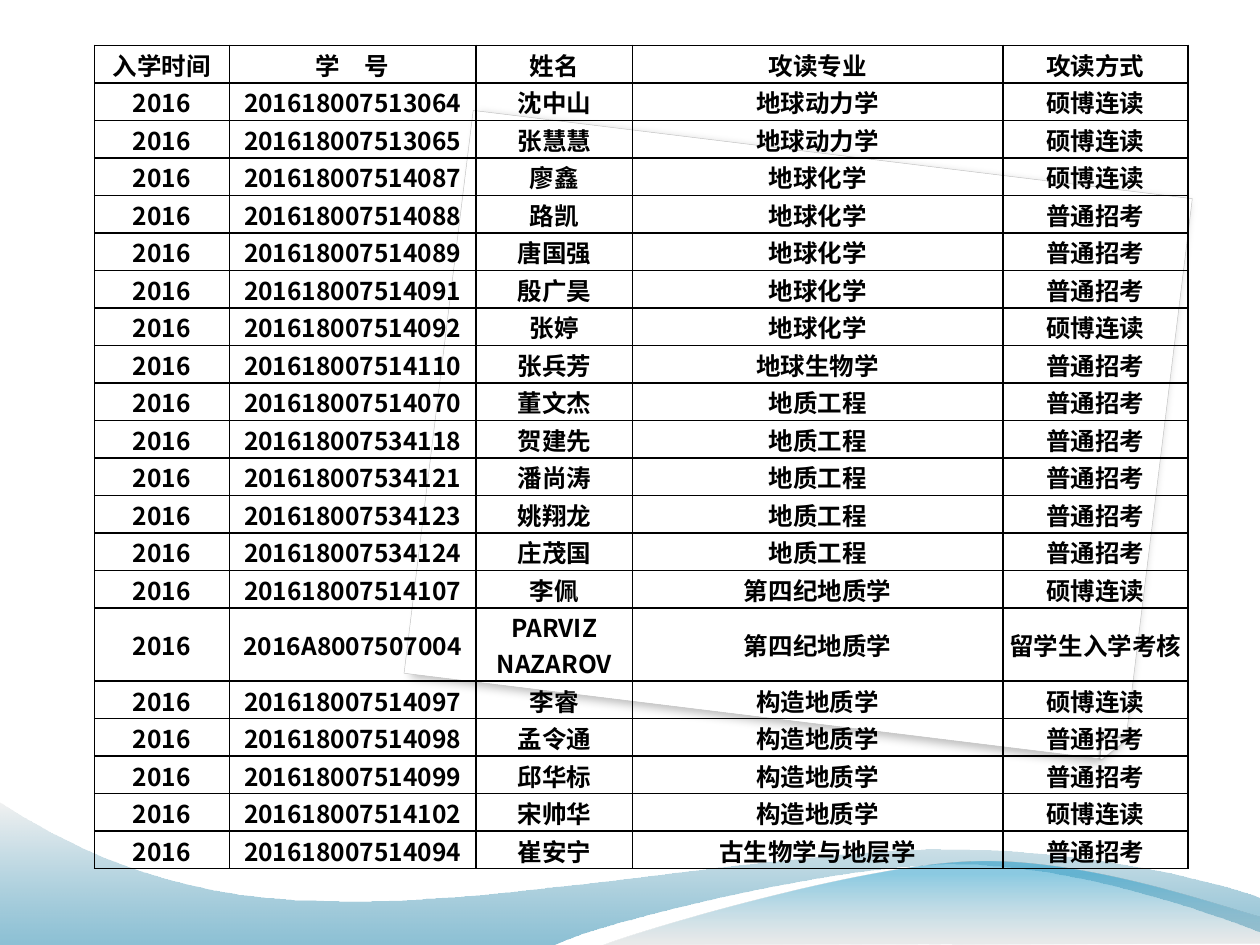
from lxml import etree
from pptx import Presentation
from pptx.dml.color import RGBColor
from pptx.enum.shapes import MSO_SHAPE
from pptx.enum.text import MSO_ANCHOR, PP_ALIGN
from pptx.oxml.ns import qn
from pptx.util import Emu, Inches, Pt

CENTER = PP_ALIGN.CENTER
MIDDLE = MSO_ANCHOR.MIDDLE
SNIPPED_CARD = MSO_SHAPE.SNIP_ROUND_RECTANGLE
FOLDED_CORNER = MSO_SHAPE.RIGHT_TRIANGLE

THEME = {
    "font": "Noto Sans CJK SC",
    "size": Pt(14),
    "text": "000000",
    "border": "000000",
    "border_width": Pt(1),
    "card": "FFFFFF",
    "card_line": "C0C0C0",
    "shadow": "000000",
}

HEADER = ("入学时间", "学　号", "姓名", "攻读专业", "攻读方式")
YEAR = "2016"
DIRECT, EXAM, FOREIGN = "硕博连读", "普通招考", "留学生入学考核"
STUDENTS = [
    ("201618007513064", "沈中山", "地球动力学", DIRECT),
    ("201618007513065", "张慧慧", "地球动力学", DIRECT),
    ("201618007514087", "廖鑫", "地球化学", DIRECT),
    ("201618007514088", "路凯", "地球化学", EXAM),
    ("201618007514089", "唐国强", "地球化学", EXAM),
    ("201618007514091", "殷广昊", "地球化学", EXAM),
    ("201618007514092", "张婷", "地球化学", DIRECT),
    ("201618007514110", "张兵芳", "地球生物学", EXAM),
    ("201618007514070", "董文杰", "地质工程", EXAM),
    ("201618007534118", "贺建先", "地质工程", EXAM),
    ("201618007534121", "潘尚涛", "地质工程", EXAM),
    ("201618007534123", "姚翔龙", "地质工程", EXAM),
    ("201618007534124", "庄茂国", "地质工程", EXAM),
    ("201618007514107", "李佩", "第四纪地质学", DIRECT),
    ("2016A8007507004", "PARVIZ NAZAROV", "第四纪地质学", FOREIGN),
    ("201618007514097", "李睿", "构造地质学", DIRECT),
    ("201618007514098", "孟令通", "构造地质学", EXAM),
    ("201618007514099", "邱华标", "构造地质学", EXAM),
    ("201618007514102", "宋帅华", "构造地质学", DIRECT),
    ("201618007514094", "崔安宁", "古生物学与地层学", EXAM),
]
TABLE_BOX = (0.75, 0.36, 8.68, 6.54)
COLUMN_WIDTHS = (1.07, 1.96, 1.24, 2.94, 1.47)
TALL_ROW_HEIGHT = 0.58
INSET = Inches(0.01)

# One point draws a line, three points draw a cubic curve.
# Gradient stops: position, colour, opacity in percent.
WAVES = [
    {
        "start": (0, 7.5),
        "segments": [
            [(4.4, 7.5)],
            [(4.76, 7.32), (6.64, 6.86), (7.58, 6.86)],
            [(8.53, 6.86), (9.58, 7.24), (10, 7.4)],
            [(10.01, 7.13)],
            [(9.83, 7.05), (8.7, 6.73), (7.46, 6.74)],
            [(6.22, 6.74), (3.82, 7.21), (2.57, 7.15)],
            [(1.29, 7.14), (0.46, 6.66), (-0.01, 6.36)],
            [(0, 7.5)],
        ],
        "stops": [(0, "0074A1", 45), (1, "E7E7E7", 55)],
    },
    {
        "start": (4.79, 7.5),
        "segments": [
            [(5.09, 7.38), (6.82, 6.87), (7.69, 6.84)],
            [(8.56, 6.8), (9.61, 7.17), (10, 7.28)],
            [(10, 7.49)],
            [(4.79, 7.5)],
        ],
        "stops": [(0, "BDBDBD", 30), (0.8, "008BBF", 45)],
    },
]
CARD_SHADOW = {"opacity": 25, "blur": 5, "distance": 3, "direction": 125,
               "skew": {"sx": "98500", "sy": "100080", "kx": "100000", "ky": "200000"}}
CORNER_SHADOW = {"opacity": 47, "blur": 1.6, "distance": 0.5, "direction": 215,
                 "skew": {}}


def add_alpha(color_element, percent):
    alpha = etree.SubElement(color_element, qn("a:alpha"))
    alpha.set("val", str(percent * 1000))


def add_shadow(shape, shadow):
    shape.shadow.inherit = False
    effects = shape._element.spPr.find(qn("a:effectLst"))
    element = etree.SubElement(
        effects, qn("a:outerShdw"),
        blurRad=str(Pt(shadow["blur"])), dist=str(Pt(shadow["distance"])),
        dir=str(shadow["direction"] * 60000), **shadow["skew"],
        algn="tl", rotWithShape="0")
    color = etree.SubElement(element, qn("a:srgbClr"), val=THEME["shadow"])
    add_alpha(color, shadow["opacity"])


def add_card_part(slide, preset, box, line_color, line_width, shadow):
    """Add a tilted, vertically flipped white part of the paper card."""
    shape = slide.shapes.add_shape(preset, *map(Inches, box))
    shape.rotation = 7
    shape._element.spPr.find(qn("a:xfrm")).set("flipV", "1")
    shape.fill.solid()
    shape.fill.fore_color.rgb = RGBColor.from_string(THEME["card"])
    shape.line.color.rgb = RGBColor.from_string(line_color)
    shape.line.width = Pt(line_width)
    add_shadow(shape, shadow)
    return shape


def bend_segments(shape, segments):
    """Join the line points of every three-point segment into one cubic curve."""
    lines = shape._element.spPr.iter(qn("a:lnTo"))
    lines = iter(list(lines))
    for segment in segments:
        members = [next(lines) for _ in segment]
        if len(members) == 3:
            curve = etree.Element(qn("a:cubicBezTo"))
            members[0].addprevious(curve)
            for member in members:
                curve.append(member[0])
                member.getparent().remove(member)


def add_wave(slide, wave):
    points = [tuple(map(Inches, point)) for segment in wave["segments"] for point in segment]
    builder = slide.shapes.build_freeform(*map(Inches, wave["start"]))
    builder.add_line_segments(points, close=True)
    shape = builder.convert_to_shape()
    bend_segments(shape, wave["segments"])
    shape.shadow.inherit = False
    shape.line.fill.background()
    shape.fill.gradient()
    shape.fill.gradient_angle = 90
    for stop, (position, color, _) in zip(shape.fill.gradient_stops, wave["stops"]):
        stop.position = position
        stop.color.rgb = RGBColor.from_string(color)
    colors = shape._element.spPr.find(qn("a:gradFill")).iter(qn("a:srgbClr"))
    for color, (_, _, opacity) in zip(colors, wave["stops"]):
        add_alpha(color, opacity)


def format_cell(cell, text):
    properties = cell._tc.get_or_add_tcPr()
    for side in ("a:lnL", "a:lnR", "a:lnT", "a:lnB"):
        line = etree.SubElement(properties, qn(side), w=str(THEME["border_width"]))
        fill = etree.SubElement(line, qn("a:solidFill"))
        etree.SubElement(fill, qn("a:srgbClr"), val=THEME["border"])
    cell.fill.background()
    cell.vertical_anchor = MIDDLE
    cell.margin_left = cell.margin_right = cell.margin_top = INSET
    cell.margin_bottom = Emu(0)
    paragraph = cell.text_frame.paragraphs[0]
    paragraph.alignment = CENTER
    run = paragraph.add_run()
    run.text = text
    run.font.size = THEME["size"]
    run.font.bold = True
    run.font.color.rgb = RGBColor.from_string(THEME["text"])
    run.font.name = THEME["font"]
    etree.SubElement(run._r.get_or_add_rPr(), qn("a:ea"), typeface=THEME["font"])


def add_student_table(slide):
    rows = [HEADER] + [(YEAR, *student) for student in STUDENTS]
    frame = slide.shapes.add_table(len(rows), len(HEADER), *map(Inches, TABLE_BOX))
    table = frame.table
    table.first_row = table.horz_banding = False
    for column, width in zip(table.columns, COLUMN_WIDTHS):
        column.width = Inches(width)
    row_height = (TABLE_BOX[3] - TALL_ROW_HEIGHT) / (len(rows) - 1)
    for row, values in zip(table.rows, rows):
        row.height = Inches(TALL_ROW_HEIGHT if FOREIGN in values else row_height)
        for cell, text in zip(row.cells, values):
            format_cell(cell, text)


def main():
    presentation = Presentation()
    presentation.slide_width = Inches(10)
    presentation.slide_height = Inches(7.5)
    slide = presentation.slides.add_slide(presentation.slide_layouts[6])
    card = add_card_part(slide, SNIPPED_CARD, (3.46, 1.21, 5.75, 4.5),
                         THEME["card_line"], 0.25, CARD_SHADOW)
    card.adjustments[0] = 0
    card.adjustments[1] = 0.04
    add_card_part(slide, FOLDED_CORNER, (8.75, 5.86, 0.17, 0.17),
                  THEME["card"], 1, CORNER_SHADOW)
    for wave in WAVES:
        add_wave(slide, wave)
    add_student_table(slide)
    presentation.save("out.pptx")


if __name__ == "__main__":
    main()
